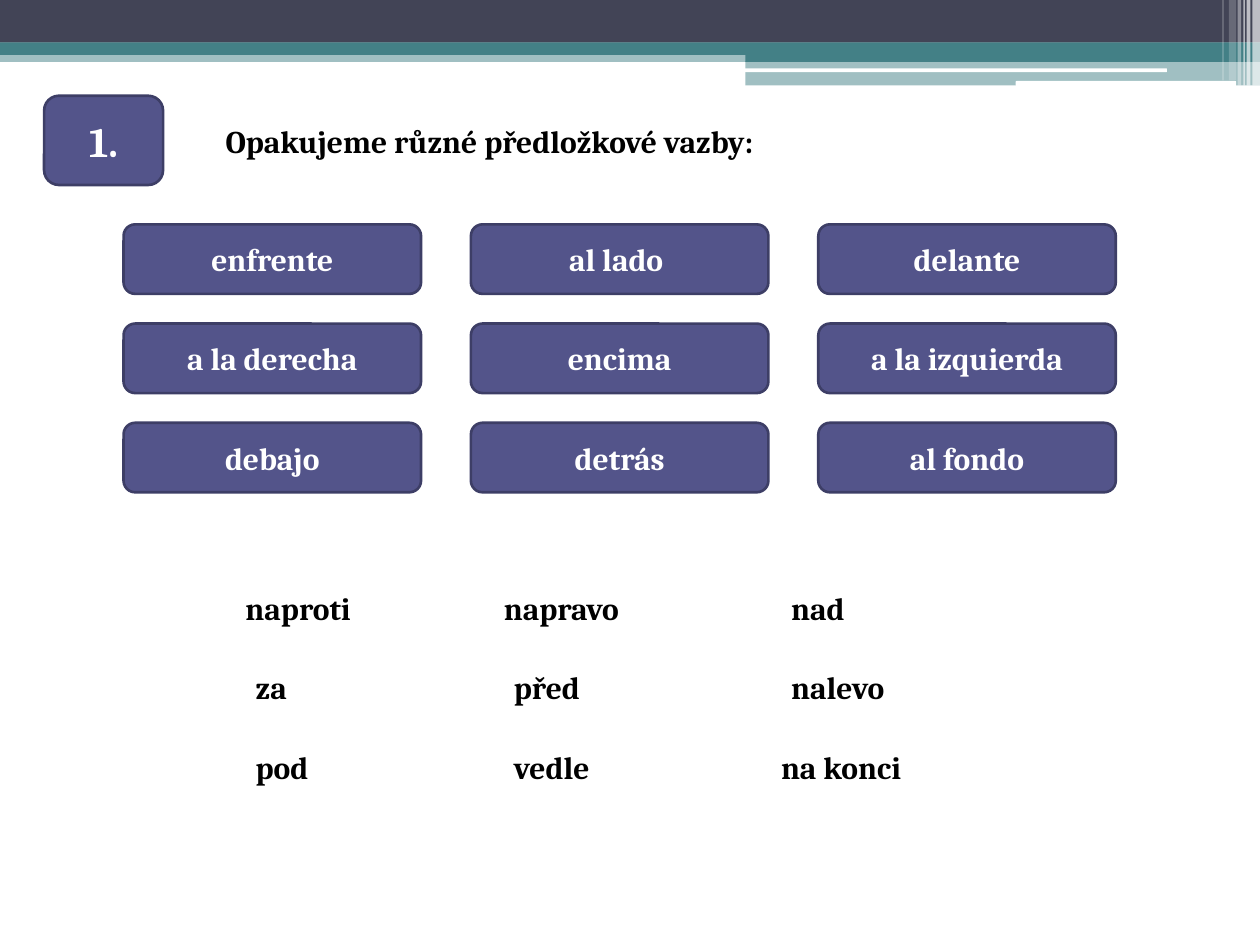
import dataclasses

import pptx
import pptx.dml.color
import pptx.enum.shapes
import pptx.enum.text
import pptx.oxml.ns
import pptx.util
from lxml import etree

Pt = pptx.util.Pt
SHAPE = pptx.enum.shapes.MSO_SHAPE
ANCHOR = pptx.enum.text.MSO_ANCHOR
ALIGN = pptx.enum.text.PP_ALIGN

FONT = "Cambria"
COLORS = {
    "navy": "424456",
    "teal": "438086",
    "violet": "53548A",
    "outline": "3D3E66",
    "white": "FFFFFF",
    "black": "000000",
}


@dataclasses.dataclass
class Box:
    left: float
    top: float
    width: float
    height: float


@dataclasses.dataclass
class Band:
    box: Box
    color: str
    opacity: int = 100
    rounded: bool = False


@dataclasses.dataclass
class Word:
    text: str
    left: float
    width: float


BANDS = [
    Band(Box(0, 28.8, 720, 6.6), "teal", 50),
    Band(Box(0, 0, 720, 24.4), "navy"),
    Band(Box(0, 24.2, 720, 7.2), "teal"),
    Band(Box(426, 28.2, 294, 7.2), "teal"),
    Band(Box(426, 34.9, 294, 14), "teal", 50),
    Band(Box(425.6, 39.1, 241.2, 2.2), "white", rounded=True),
    Band(Box(580.4, 46.3, 126, 2.9), "white", rounded=True),
]
# Vertical stripes in the top right corner: left, width, height, opacity
STRIPES = [
    (715.6, 4.4, 49, 65),
    (712.4, 2.1, 49, 65),
    (710.6, 0.8, 49, 60),
    (707.2, 2.1, 49, 40),
    (702.2, 4.2, 46, 20),
    (698.5, 0.8, 46, 30),
]

SPANISH = [
    ["enfrente", "al lado ", "delante"],
    ["a la derecha", "encima", "a la izquierda"],
    ["debajo", "detrás", "al fondo"],
]
BUTTON = Box(70.6, 128.2, 170, 39.7)
BUTTON_STEP_X, BUTTON_STEP_Y = 198.5, 56.7

CZECH = [
    [Word("naproti", 133.2, 84.2), Word("napravo", 280.8, 92.2), Word("nad", 445, 51.8)],
    [Word("za", 139, 35.3), Word("před", 286.6, 58.3), Word("nalevo", 445, 76.3)],
    [Word("pod", 139, 50.4), Word("vedle", 286.6, 64.1), Word("na konci", 439.2, 94.3)],
]
CZECH_TOP, CZECH_STEP, LINE_HEIGHT = 332.8, 45.4, 29


def rgb(color: str) -> pptx.dml.color.RGBColor:
    return pptx.dml.color.RGBColor.from_string(COLORS[color])


def in_points(box: Box) -> list:
    return [Pt(v) for v in dataclasses.astuple(box)]


def write(tf, text: str, size: float, color: str, align) -> None:
    tf.text = text
    p = tf.paragraphs[0]
    p.alignment = align
    font = p.runs[0].font
    font.name, font.size, font.bold = FONT, Pt(size), True
    font.color.rgb = rgb(color)


def add_band(s, band: Band) -> None:
    kind = SHAPE.ROUNDED_RECTANGLE if band.rounded else SHAPE.RECTANGLE
    sp = s.shapes.add_shape(kind, *in_points(band.box))
    sp.shadow.inherit = False
    sp.fill.solid()
    sp.fill.fore_color.rgb = rgb(band.color)
    sp.line.fill.background()
    if band.opacity < 100:
        qn = pptx.oxml.ns.qn
        clr = sp.fill._xPr.find(qn("a:solidFill")).find(qn("a:srgbClr"))
        etree.SubElement(clr, qn("a:alpha")).set("val", str(band.opacity * 1000))


def add_button(s, box: Box, text: str, size: float) -> None:
    sp = s.shapes.add_shape(SHAPE.ROUNDED_RECTANGLE, *in_points(box))
    sp.shadow.inherit = False
    sp.fill.solid()
    sp.fill.fore_color.rgb = rgb("violet")
    sp.line.color.rgb = rgb("outline")
    sp.line.width = Pt(1.5)
    sp.text_frame.vertical_anchor = ANCHOR.MIDDLE
    write(sp.text_frame, text, size, "white", ALIGN.CENTER)


def write_label(sp, text: str) -> None:
    tf = sp.text_frame
    tf.word_wrap = False
    tf.vertical_anchor = ANCHOR.TOP
    tf.auto_size = pptx.enum.text.MSO_AUTO_SIZE.SHAPE_TO_FIT_TEXT
    write(tf, text, 18, "black", ALIGN.LEFT)


def add_title(s, box: Box, text: str) -> None:
    title = s.shapes.title
    title.left, title.top, title.width, title.height = in_points(box)
    write_label(title, text)


def main() -> None:
    prs = pptx.Presentation()
    prs.slide_width, prs.slide_height = Pt(720), Pt(540)
    s = prs.slides.add_slide(prs.slide_layouts.get_by_name("Title Only"))

    for band in BANDS:
        add_band(s, band)
    for left, width, height, opacity in STRIPES:
        add_band(s, Band(Box(left, 0, width, height), "white", opacity))

    add_button(s, Box(25.2, 54.7, 68, 51), "1.", 24)
    add_title(s, Box(121.7, 66.2, 368.6, LINE_HEIGHT), "Opakujeme různé předložkové vazby:")

    for row, texts in enumerate(SPANISH):
        for col, text in enumerate(texts):
            box = dataclasses.replace(
                BUTTON,
                left=BUTTON.left + col * BUTTON_STEP_X,
                top=BUTTON.top + row * BUTTON_STEP_Y,
            )
            add_button(s, box, text, 18)

    for row, words in enumerate(CZECH):
        for word in words:
            box = Box(word.left, CZECH_TOP + row * CZECH_STEP, word.width, LINE_HEIGHT)
            write_label(s.shapes.add_textbox(*in_points(box)), word.text)

    prs.save("out.pptx")


if __name__ == "__main__":
    main()
